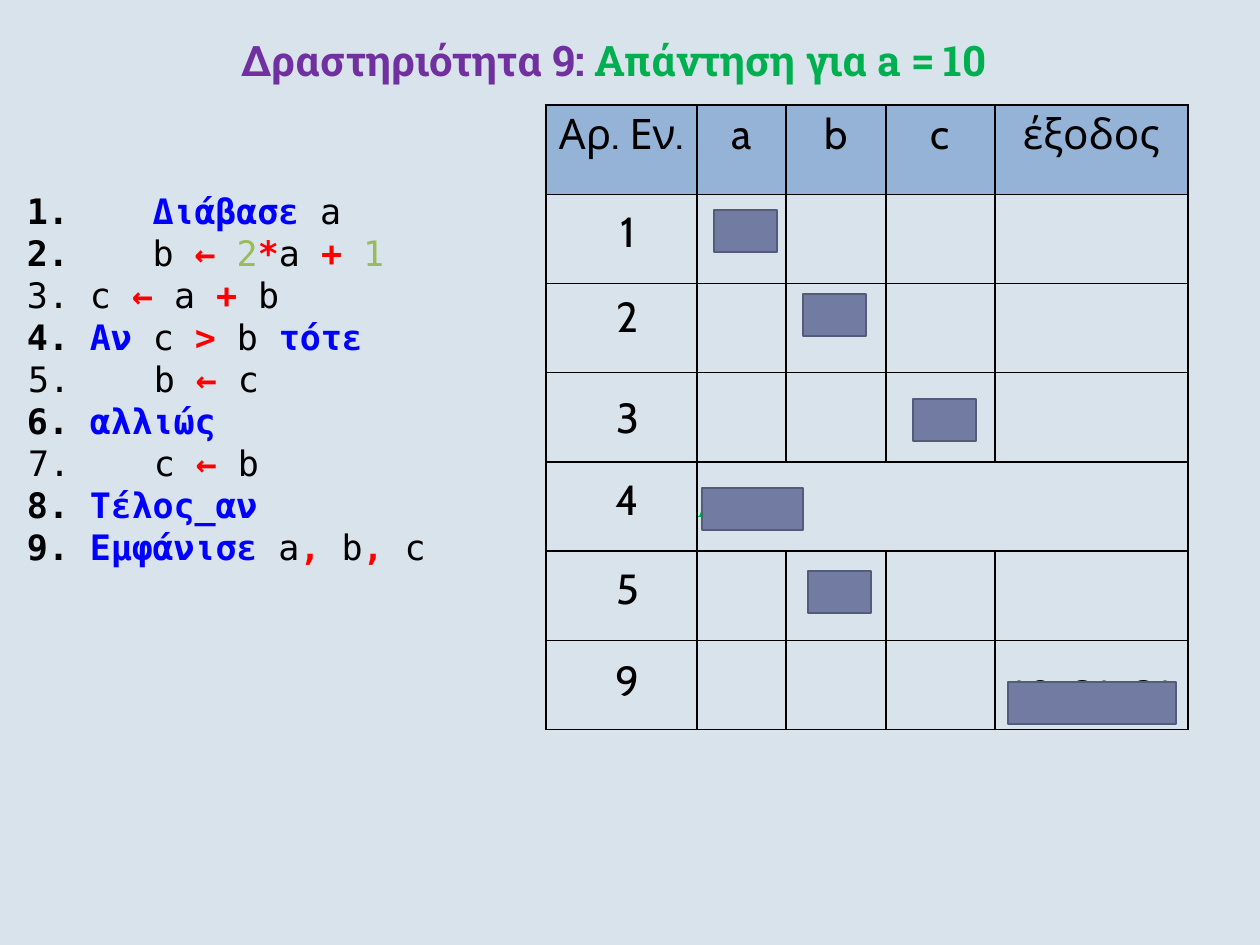
from lxml import etree
from pptx import Presentation, util as u
from pptx.dml.color import RGBColor
from pptx.enum import shapes, text
from pptx.oxml import ns

BLACK = RGBColor(0x00, 0x00, 0x00)
BLUE = RGBColor(0x00, 0x00, 0xFF)
RED = RGBColor(0xFF, 0x00, 0x00)
OLIVE = RGBColor(0x9B, 0xBA, 0x58)
PURPLE = RGBColor(0x70, 0x30, 0xA0)
GREEN = RGBColor(0x00, 0xB0, 0x50)
HEAD = RGBColor(0x94, 0xB3, 0xD6)
COVER = RGBColor(0x72, 0x7C, 0xA3)
EDGE = RGBColor(0x54, 0x5C, 0x79)
PAPER = RGBColor(0xD9, 0xE3, 0xEB)

TITLE = [("Δραστηριότητα 9: ", PURPLE, True), ("Απάντηση για a = 10", GREEN, True)]

VAR, NUM, KEY, OP, LIT = (BLACK, False), (BLACK, True), (BLUE, True), (RED, True), (OLIVE, False)
FLAT, STEP, DEEP = (1, 0), (64, -63), (86, -84)
CODE = [
    (FLAT, [("1.    ", *NUM), ("Διάβασε ", *KEY), ("a", *VAR)]),
    (FLAT, [("2.    ", *NUM), ("b ", *VAR), ("← ", *OP), ("2", *LIT), ("*", *OP),
            ("a ", *VAR), ("+ ", *OP), ("1", *LIT)]),
    (STEP, [("c ", *VAR), ("← ", *OP), ("a ", *VAR), ("+ ", *OP), ("b", *VAR)]),
    (STEP, [("Αν ", *KEY), ("c ", *VAR), ("> ", *OP), ("b ", *VAR), ("τότε", *KEY)]),
    (DEEP, [("  b ", *VAR), ("← ", *OP), ("c", *VAR)]),
    (STEP, [("αλλιώς", *KEY)]),
    (DEEP, [("  c ", *VAR), ("← ", *OP), ("b", *VAR)]),
    (STEP, [("Τέλος_αν", *KEY)]),
    (STEP, [("Εμφάνισε ", *KEY), ("a", *VAR), (", ", *OP), ("b", *VAR), (", ", *OP), ("c", *VAR)]),
]
START = 3

TRACE = [
    ["Αρ. Εν.", "a", "b", "c", "έξοδος"],
    ["1", "10", "", "", ""],
    ["2", "", "21", "", ""],
    ["3", "", "", "31", ""],
    ["4", "Αληθής", "", "", ""],
    ["5", "", "31", "", ""],
    ["9", "", "", "", "10\t31\t31"],
]
COLS = [151, 89, 100, 109, 193]
TOPS = [4, 13, 8, 20, 13, 13, 16]
INDENTS = [12, 3, 8, 3, 0]
GRID = (546, 105, sum(COLS), 625)
TABS = [62, 123]
COVERS = [(714, 210, 63), (803, 294, 63), (913, 399, 63),
          (702, 488, 101), (808, 571, 63), (1008, 682, 168)]
TALL = 42


def px(n):
    return u.Emu(round(n * 914400 / 126))


def put(obj, **vals):
    for key, val in vals.items():
        setattr(obj, key, val)


def place(shape, *box):
    put(shape, **dict(zip(("left", "top", "width", "height"), map(px, box))))


def sub(node, tag, **vals):
    return etree.SubElement(node, ns.qn("a:" + tag), {k: str(v) for k, v in vals.items()})


def tabs(par, stops):
    row = sub(par._p.get_or_add_pPr(), "tabLst")
    for stop in stops:
        sub(row, "tab", pos=px(stop), algn="l")


def write(par, runs, face, size, gap=0):
    for words, tint, bold in runs:
        run = par.add_run()
        run.text = words
        put(run.font, name=face, size=u.Pt(size), bold=bold)
        run.font.color.rgb = tint
        run._r.get_or_add_rPr().set("spc", str(gap))


def frame(shape, anchor):
    box = shape.text_frame
    put(box, margin_left=0, margin_right=0, margin_top=px(1), margin_bottom=0,
        word_wrap=True, vertical_anchor=anchor, auto_size=text.MSO_AUTO_SIZE.NONE)
    return box


def number(par, indent):
    left, hang = indent
    props = par._p.get_or_add_pPr()
    props.set("marL", str(px(left)))
    props.set("indent", str(px(hang)))
    if hang:
        sub(sub(props, "buClr"), "srgbClr", val=BLACK)
        sub(props, "buAutoNum", type="arabicPeriod", startAt=START)
        tabs(par, [left])
    else:
        sub(props, "buNone")


def border(cell):
    props = cell._tc.get_or_add_tcPr()
    for spot, side in enumerate(("lnL", "lnR", "lnT", "lnB")):
        line = sub(props, side, w=u.Pt(1))
        sub(sub(line, "solidFill"), "srgbClr", val=BLACK)
        props.insert(spot, line)


def fill(cell, r, c):
    put(cell, margin_left=0, margin_right=0, margin_top=px(TOPS[r]), margin_bottom=0)
    if r == 0:
        cell.fill.solid()
        cell.fill.fore_color.rgb = HEAD
    else:
        cell.fill.background()
    border(cell)
    words = TRACE[r][c]
    if not words:
        return
    par = cell.text_frame.paragraphs[0]
    if cell.is_merge_origin:
        put(cell, margin_top=0, vertical_anchor=text.MSO_ANCHOR.MIDDLE)
        write(par, [(words, GREEN, False)], "Times New Roman", 18)
        return
    par.alignment = text.PP_ALIGN.CENTER
    if r:
        par._p.get_or_add_pPr().set("marL", str(px(INDENTS[c])))
    if "\t" in words:
        cell.margin_top = px(30)
        tabs(par, TABS)
    write(par, [(words, BLACK, False)], "Cabin", 24)


def main():
    deck = Presentation()
    put(deck, slide_width=px(1260), slide_height=px(945))
    slide = deck.slides.add_slide(deck.slide_layouts[1])
    back = slide.background.fill
    back.solid()
    back.fore_color.rgb = PAPER

    title, body = slide.placeholders
    place(title, 86, 32, 1056, 53)
    par = frame(title, text.MSO_ANCHOR.BOTTOM).paragraphs[0]
    par.alignment = text.PP_ALIGN.CENTER
    write(par, TITLE, "Roboto Slab", 24, -10)

    place(body, 26, 188, 426, 383)
    box = frame(body, text.MSO_ANCHOR.TOP)
    for i, (indent, runs) in enumerate(CODE):
        par = box.add_paragraph() if i else box.paragraphs[0]
        number(par, indent)
        par.space_before = u.Pt(0)
        write(par, runs, "DejaVu Sans Mono", 20, -10)

    table = slide.shapes.add_table(len(TRACE), len(COLS), *map(px, GRID)).table
    put(table, first_row=False, horz_banding=False)
    for col, wide in zip(table.columns, COLS):
        col.width = px(wide)
    for row in table.rows:
        row.height = px(GRID[3] / len(TRACE))
    table.cell(4, 1).merge(table.cell(4, 4))
    for r in range(len(TRACE)):
        for c in range(len(COLS)):
            fill(table.cell(r, c), r, c)

    for left, top, wide in COVERS:
        cover = slide.shapes.add_shape(shapes.MSO_SHAPE.RECTANGLE, *map(px, (left, top, wide, TALL)))
        cover.shadow.inherit = False
        cover.fill.solid()
        cover.fill.fore_color.rgb = COVER
        cover.line.color.rgb = EDGE
        cover.line.width = u.Pt(1.5)

    deck.save("out.pptx")


if __name__ == "__main__":
    main()
